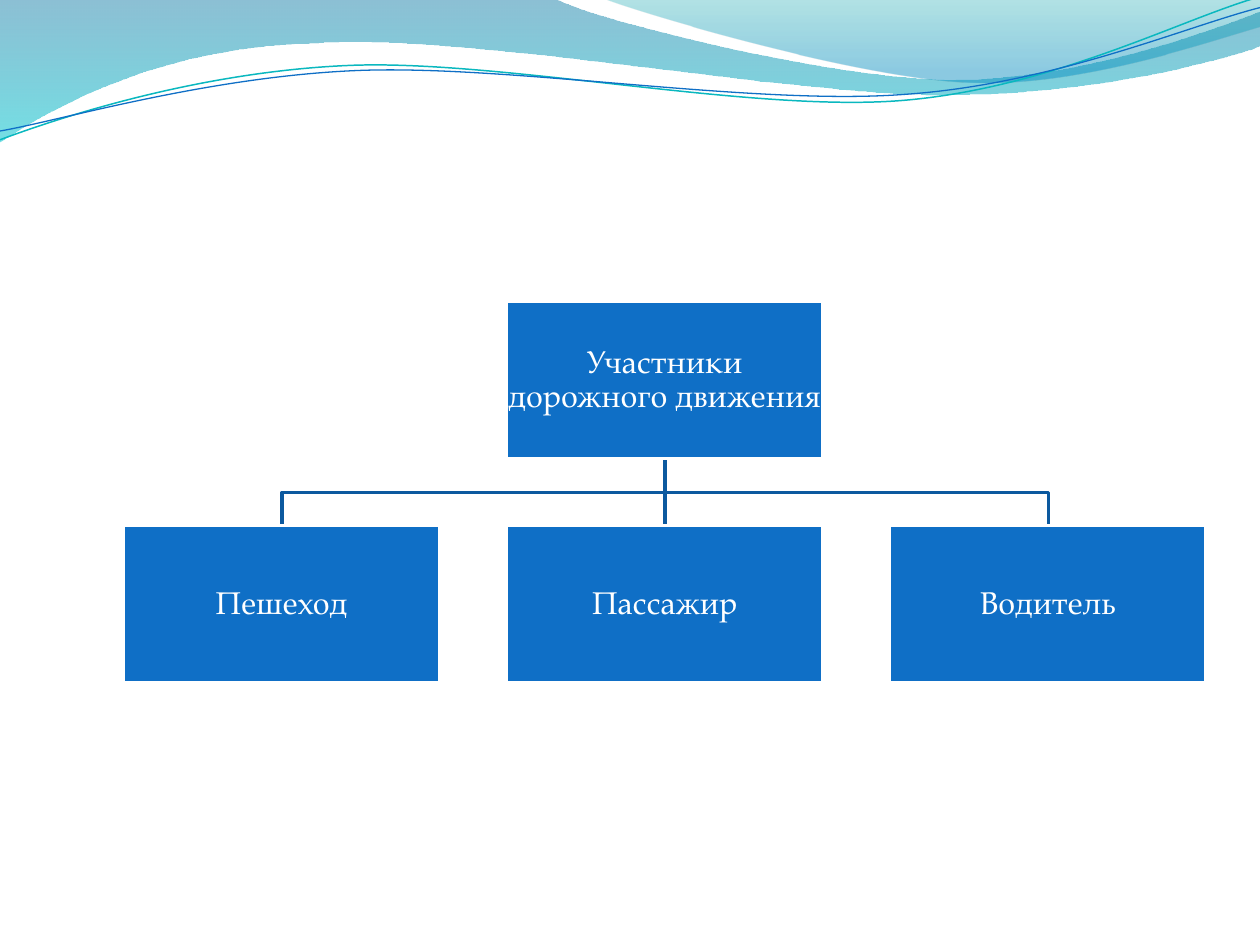
from dataclasses import dataclass
from math import cos, radians, sin

from lxml.etree import SubElement
from pptx import Presentation
from pptx.dml.color import RGBColor
from pptx.enum.shapes import MSO_SHAPE
from pptx.enum.text import MSO_ANCHOR, PP_ALIGN
from pptx.oxml.ns import qn
from pptx.util import Inches, Pt


@dataclass(frozen=True)
class Theme:
    font: str = "TeX Gyre Pagella"
    size: float = 18
    box: str = "0F6FC6"
    branch: str = "0C599F"
    teal: str = "0AB8BF"
    white: str = "FFFFFF"
    left_wave: tuple = ((0, "0074A1", 45), (1, "00C6CF", 55))
    right_wave: tuple = ((0, "00A1A9", 30), (0.8, "008BBF", 45))


def add_path(s, frame, points, close=False, rotation=0):
    x, y, w, h = frame
    builder = s.shapes.build_freeform(Inches(x), Inches(y), scale=1.0)
    builder.add_line_segments([(Inches(x + w), Inches(y + h))], close=False)
    sp = builder.convert_to_shape()
    sp.shadow.inherit = False
    sp.rotation = rotation
    path = next(sp.element.spPr.iter(qn("a:path")))
    for node in list(path):
        path.remove(node)
    turn = radians(-rotation)
    for i, coords in enumerate(points):
        tag = "a:moveTo" if i == 0 else "a:lnTo" if len(coords) == 2 else "a:cubicBezTo"
        command = SubElement(path, qn(tag))
        for px, py in zip(coords[::2], coords[1::2]):
            dx, dy = px - x - w / 2, py - y - h / 2
            pt = SubElement(command, qn("a:pt"))
            pt.set("x", str(Inches(w / 2 + dx * cos(turn) - dy * sin(turn))))
            pt.set("y", str(Inches(h / 2 + dx * sin(turn) + dy * cos(turn))))
    if close:
        SubElement(path, qn("a:close"))
    return sp


def set_line(line, color, width):
    line.color.rgb = RGBColor.from_string(color)
    line.width = Pt(width)


theme = Theme()
prs = Presentation()
prs.slide_width, prs.slide_height = Inches(10), Inches(7.5)
s = prs.slides.add_slide(prs.slide_layouts[6])

waves = [
    (theme.left_wave, (-0.01, -0.01, 10.02, 1.14), [
        (0, 0), (4.4, -0.01),
        (4.76, 0.17, 6.64, 0.63, 7.58, 0.63),
        (8.53, 0.63, 9.58, 0.26, 10, 0.09), (10.01, 0.36),
        (9.83, 0.44, 8.7, 0.76, 7.46, 0.75),
        (6.22, 0.75, 3.82, 0.28, 2.57, 0.34),
        (1.29, 0.36, 0.46, 0.83, -0.01, 1.13), (0, 0),
    ]),
    (theme.right_wave, (4.79, -0.01, 5.21, 0.7), [
        (4.79, -0.01),
        (5.09, 0.11, 6.82, 0.62, 7.69, 0.65),
        (8.56, 0.69, 9.61, 0.32, 10, 0.21), (10, 0), (4.79, -0.01),
    ]),
]
for stops, frame, points in waves:
    sp = add_path(s, frame, points, close=True)
    sp.line.fill.background()
    sp.fill.gradient()
    sp.fill.gradient_angle = 270
    for stop, (position, color, opacity) in zip(sp.fill.gradient_stops, stops):
        stop.position = position
        stop.color.rgb = RGBColor.from_string(color)
    colors = sp.element.spPr.iter(qn("a:srgbClr"))
    for node, (position, color, opacity) in zip(colors, stops):
        SubElement(node, qn("a:alpha")).set("val", str(opacity * 1000))

curves = [
    (theme.teal, 0.85, (-0.02, 0.22, 10.02, 0.71), [
        (0, 1.11),
        (0.48, 0.93, 1.58, 0.57, 2.77, 0.52),
        (3.95, 0.47, 5.93, 0.89, 7.13, 0.8),
        (8.33, 0.71, 9.38, 0.15, 9.98, -0.02),
    ]),
    (theme.box, 0.75, (-0.02, 0.3, 10.03, 0.58), [
        (0, 1.04),
        (0.47, 0.96, 1.64, 0.61, 2.83, 0.56),
        (4.03, 0.51, 5.97, 0.84, 7.17, 0.75),
        (8.36, 0.67, 9.41, 0.21, 10, 0.06),
    ]),
]
for color, width, frame, points in curves:
    sp = add_path(s, frame, points, rotation=357.3)
    sp.fill.background()
    set_line(sp.line, color, width)

box_w, box_h = 2.51, 1.25
left, pitch = 0.98, 3.04
root_top, child_top = 2.39, 4.17
root_left = left + pitch
center, root_bottom = 5.28, root_top + box_h
drop = child_top - root_bottom
middle = 3.91
start = (center, root_bottom)

branches = [
    (center, pitch, [start, (center, middle), (center + pitch, middle), (center + pitch, child_top)]),
    (center - 0.05, 0.1, [start, (center, child_top)]),
    (center - pitch, pitch, [start, (center, middle), (center - pitch, middle), (center - pitch, child_top)]),
]
for x, width, points in branches:
    sp = add_path(s, (x, root_bottom, width, drop), points)
    sp.fill.background()
    set_line(sp.line, theme.branch, 2)

boxes = [("Участники дорожного движения", root_left, root_top)]
for i, name in enumerate(("Пешеход", "Пассажир", "Водитель")):
    boxes.append((name, left + i * pitch, child_top))

for text, x, y in boxes:
    sp = s.shapes.add_shape(
        MSO_SHAPE.RECTANGLE, Inches(x), Inches(y), Inches(box_w), Inches(box_h)
    )
    sp.shadow.inherit = False
    sp.fill.solid()
    sp.fill.fore_color.rgb = RGBColor.from_string(theme.box)
    set_line(sp.line, theme.white, 2)
    tf = sp.text_frame
    tf.word_wrap = True
    tf.vertical_anchor = MSO_ANCHOR.MIDDLE
    tf.margin_left = tf.margin_right = tf.margin_top = tf.margin_bottom = Inches(0.01)
    tf.text = text
    p = tf.paragraphs[0]
    p.alignment = PP_ALIGN.CENTER
    p.line_spacing = 0.9
    r = p.runs[0]
    r.font.name = theme.font
    r.font.size = Pt(theme.size)
    r.font.color.rgb = RGBColor.from_string(theme.white)

prs.save("out.pptx")
